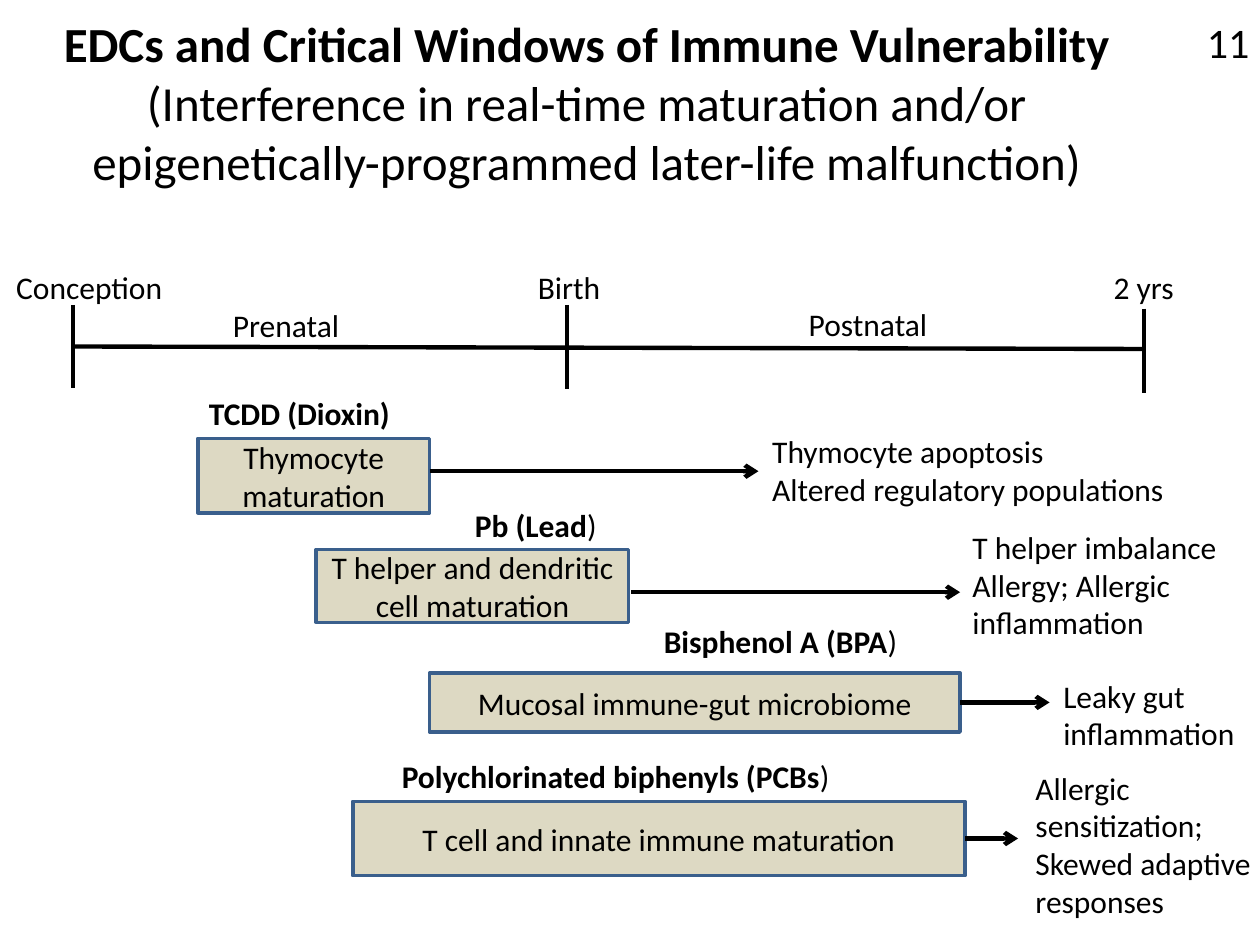
from dataclasses import dataclass
from typing import Optional

from lxml.etree import SubElement
from pptx import Presentation
from pptx.dml.color import RGBColor
from pptx.enum.shapes import MSO_CONNECTOR, MSO_SHAPE
from pptx.enum.text import MSO_ANCHOR, MSO_AUTO_SIZE, PP_ALIGN
from pptx.oxml.ns import qn
from pptx.util import Inches, Pt

BLACK = RGBColor(0x00, 0x00, 0x00)
TAN = RGBColor(0xDD, 0xD9, 0xC3)
BLUE = RGBColor(0x3A, 0x5F, 0x8C)
BODY_FONT = {"name": "Calibri", "size": Pt(18), "bold": False}


@dataclass
class Label:
    lines: tuple[str, ...]
    left: float
    top: float
    width: float
    height: float = 0.4
    size: int = 18
    wrap: bool = False
    bold: bool = False
    plain_ending: str = ""


@dataclass
class Window:
    maturation: str
    left: float
    top: float
    width: float
    height: float
    arrow_end: float
    chemical: Label
    outcome: Label
    arrow_start: Optional[tuple[float, float]] = None


WINDOWS = (
    Window("Thymocyte maturation", 1.57, 3.48, 1.84, 0.59, 6.02,
           Label(("TCDD (Dioxin)",), 1.56, 3.08, 1.65, bold=True),
           Label(("Thymocyte apoptosis", "Altered regulatory populations"),
                 6.03, 3.38, 3.35, 0.71),
           arrow_start=(3.41, 3.74)),
    Window("T helper and dendritic cell maturation", 2.51, 4.36, 2.48, 0.58, 7.62,
           Label(("Pb (Lead",), 3.67, 3.97, 1.18, bold=True, plain_ending=")"),
           Label(("T helper imbalance", "Allergy; Allergic inflammation"),
                 7.62, 4.14, 2.54, 1.01, wrap=True),
           arrow_start=(5.01, 4.7)),
    Window("Mucosal immune-gut microbiome", 3.41, 5.34, 4.21, 0.47, 8.33,
           Label(("Bisphenol A (BPA",), 5.17, 4.89, 2.07, bold=True, plain_ending=")"),
           Label(("Leaky gut", "inflammation"), 8.34, 5.32, 1.58, 0.71)),
    Window("T cell and innate immune maturation", 2.8, 6.36, 4.86, 0.59, 8.08,
           Label(("Polychlorinated biphenyls (PCBs",), 3.09, 5.96, 3.62,
                 bold=True, plain_ending=")"),
           Label(("Allergic", "sensitization;", "Skewed adaptive", "responses"),
                 8.12, 6.05, 1.93, 1.31)),
)

TIMELINE_LABELS = (
    Label(("Conception",), 0.03, 2.08, 1.38),
    Label(("Birth",), 4.17, 2.08, 0.7),
    Label(("2 yrs",), 8.74, 2.08, 0.68),
    Label(("Prenatal",), 1.75, 2.38, 1.05),
    Label(("Postnatal",), 6.32, 2.37, 1.15),
)
TIMELINE_LINES = (
    ((0.58, 2.42), (0.58, 3.08)),
    ((4.5, 2.42), (4.5, 3.09)),
    ((9.08, 2.45), (9.08, 3.12)),
    ((9.08, 2.77), (0.58, 2.75)),
)
PAGE_NUMBER = Label(("11",), 9.48, 0.08, 0.54, 0.5, size=24)


def add_text(paragraph, text: str, **changes) -> None:
    run = paragraph.add_run()
    run.text = text
    for attribute, value in {**BODY_FONT, **changes}.items():
        setattr(run.font, attribute, value)
    run.font.color.rgb = BLACK


def draw_label(slide, label: Label) -> None:
    box = slide.shapes.add_textbox(Inches(label.left), Inches(label.top),
                                   Inches(label.width), Inches(label.height))
    frame = box.text_frame
    frame.word_wrap = label.wrap
    frame.auto_size = MSO_AUTO_SIZE.SHAPE_TO_FIT_TEXT
    for index, line in enumerate(label.lines):
        paragraph = frame.add_paragraph() if index else frame.paragraphs[0]
        add_text(paragraph, line, size=Pt(label.size), bold=label.bold)
    if label.plain_ending:
        add_text(frame.paragraphs[-1], label.plain_ending)


def draw_line(slide, start: tuple[float, float], end: tuple[float, float],
              arrow: bool = False):
    line = slide.shapes.add_connector(MSO_CONNECTOR.STRAIGHT,
                                      Inches(start[0]), Inches(start[1]),
                                      Inches(end[0]), Inches(end[1]))
    line.line.color.rgb = BLACK
    line.line.width = Pt(2.5)
    if arrow:
        SubElement(line.line._get_or_add_ln(), qn("a:tailEnd"), type="arrow")
    SubElement(line._element.spPr, qn("a:effectLst"))
    return line


def draw_window(slide, window: Window) -> None:
    bar = slide.shapes.add_shape(MSO_SHAPE.RECTANGLE,
                                 Inches(window.left), Inches(window.top),
                                 Inches(window.width), Inches(window.height))
    bar.shadow.inherit = False
    bar.fill.solid()
    bar.fill.fore_color.rgb = TAN
    bar.line.color.rgb = BLUE
    bar.line.width = Pt(2)
    frame = bar.text_frame
    frame.word_wrap = True
    frame.vertical_anchor = MSO_ANCHOR.MIDDLE
    frame.paragraphs[0].alignment = PP_ALIGN.CENTER
    add_text(frame.paragraphs[0], window.maturation)

    side_middle = (window.left + window.width, window.top + window.height / 2)
    start = window.arrow_start or side_middle
    arrow = draw_line(slide, start, (window.arrow_end, start[1]), arrow=True)
    if window.arrow_start is None:
        arrow.begin_connect(bar, 3)
        arrow.end_y = arrow.begin_y
    draw_label(slide, window.chemical)
    draw_label(slide, window.outcome)


def draw_title(slide) -> None:
    title = slide.shapes.title
    placement = {"left": Inches(0.03), "top": Inches(0),
                 "width": Inches(9.25), "height": Inches(1.62)}
    for attribute, value in placement.items():
        setattr(title, attribute, value)
    frame = title.text_frame
    frame.word_wrap = True
    frame.auto_size = MSO_AUTO_SIZE.NONE
    frame.vertical_anchor = MSO_ANCHOR.MIDDLE
    paragraph = frame.paragraphs[0]
    paragraph.alignment = PP_ALIGN.CENTER
    add_text(paragraph, "EDCs and Critical Windows of Immune Vulnerability",
             size=Pt(28), bold=True)
    paragraph.add_line_break()
    add_text(paragraph, "(Interference in real-time maturation and/or "
             "epigenetically-programmed later-life malfunction)", size=Pt(28))


def main() -> None:
    presentation = Presentation()
    presentation.slide_width = Inches(10)
    presentation.slide_height = Inches(7.5)
    slide = presentation.slides.add_slide(presentation.slide_layouts[5])
    draw_title(slide)
    for start, end in TIMELINE_LINES:
        draw_line(slide, start, end)
    for label in (*TIMELINE_LABELS, PAGE_NUMBER):
        draw_label(slide, label)
    for window in WINDOWS:
        draw_window(slide, window)
    presentation.save("out.pptx")


if __name__ == "__main__":
    main()
